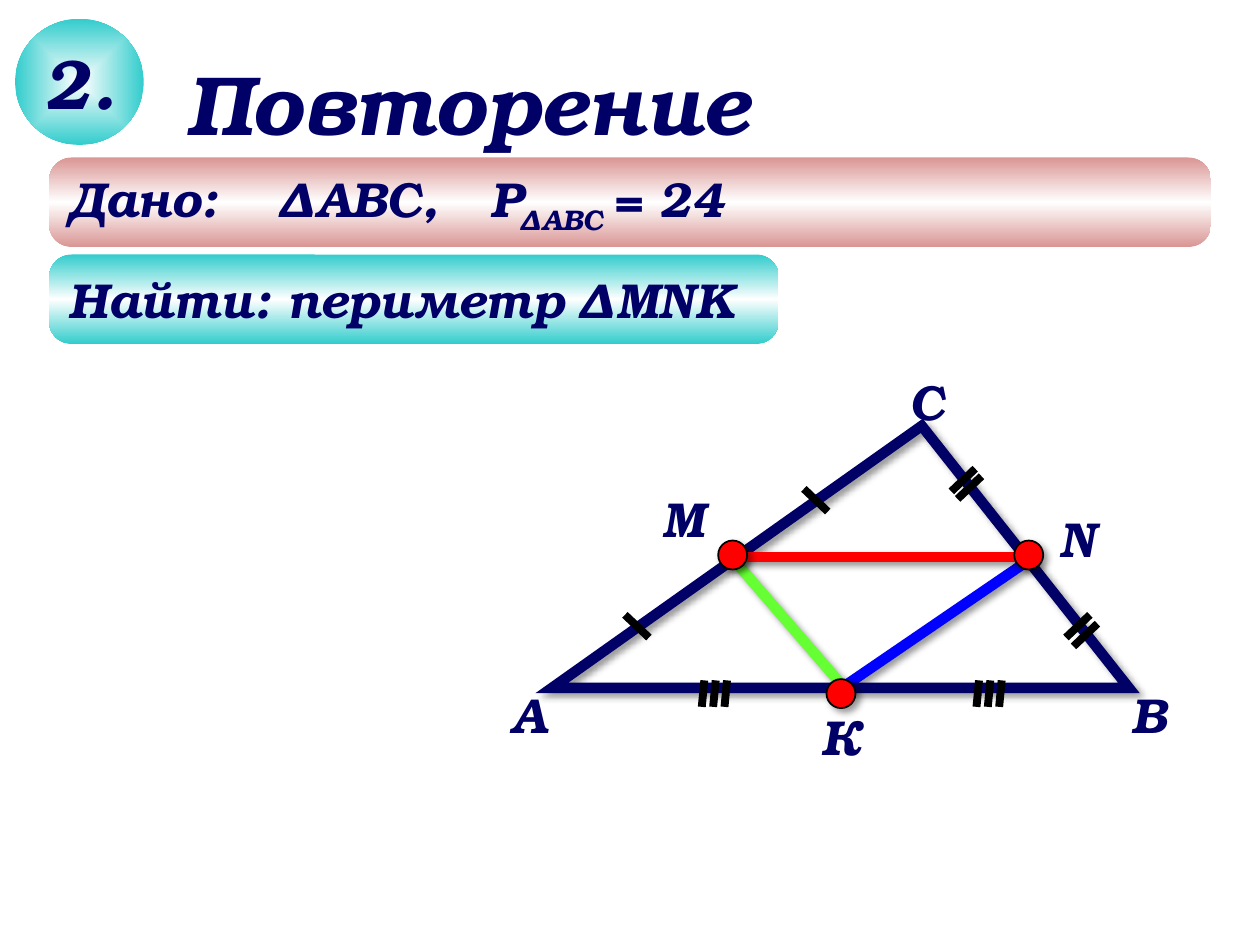
"""Build a geometry revision slide about a triangle and its midlines."""
from dataclasses import dataclass

from lxml.etree import SubElement
from pptx import Presentation
from pptx.dml.color import RGBColor
from pptx.enum.shapes import MSO_CONNECTOR, MSO_SHAPE
from pptx.enum.text import MSO_ANCHOR, MSO_AUTO_SIZE, PP_ALIGN
from pptx.oxml.ns import qn
from pptx.util import Inches, Pt

FONT = "TeX Gyre Bonum"
COLORS = {
    "navy": "000066", "rose": "D99694", "teal": "33CCCC", "white": "FFFFFF",
    "green": "66FF33", "blue": "0000FF", "red": "FF0000", "black": "000000",
    "outline": "5E457C",
}


@dataclass(frozen=True)
class Segment:
    start: tuple[float, float]
    end: tuple[float, float]
    color: str


@dataclass(frozen=True)
class Label:
    text: str
    left: float
    top: float
    width: float = 0.5


@dataclass(frozen=True)
class TickGroup:
    starts: tuple[tuple[float, float], ...]
    run: float
    rise: float


@dataclass(frozen=True)
class Bar:
    top: float
    width: float
    color: str


GIVEN_BAR = Bar(1.25, 9.22, "rose")
FIND_BAR = Bar(2.02, 5.79, "teal")
INNER_SIDES = [
    Segment((6.71, 5.47), (5.82, 4.44), "green"),
    Segment((8.13, 4.47), (6.71, 5.44), "blue"),
]
MIDLINE = Segment((5.85, 4.42), (8.18, 4.42), "red")
MIDPOINTS = [(5.7, 4.29), (8.05, 4.29), (6.56, 5.39)]
TICKS = [
    TickGroup(((6.38, 3.88), (4.96, 4.88)), 0.19, 0.18),
    TickGroup(((7.74, 3.72), (7.79, 3.78), (8.65, 4.88), (8.71, 4.95)), -0.19, 0.18),
    TickGroup(tuple((left + offset, 5.4) for left in (5.59, 7.77)
                    for offset in (0, 0.09, 0.18)), -0.02, 0.21),
]
LABELS = [
    Label("А", 3.96, 5.38), Label("С", 7.12, 2.9), Label("В", 8.88, 5.38),
    Label("М", 5.16, 3.83, 0.54), Label("N", 8.31, 3.99), Label("К", 6.42, 5.56),
]


def rgb(name: str) -> RGBColor:
    return RGBColor.from_string(COLORS[name])


def add_color(parent, name: str):
    return SubElement(parent, qn("a:srgbClr"), val=COLORS[name])


def format_runs(paragraph, size: float) -> None:
    for run in paragraph.runs:
        font = run.font
        font.name, font.size = FONT, Pt(size)
        font.bold = font.italic = True
        font.color.rgb = rgb("navy")


def set_gradient(shape, stops: list[tuple[int, str]], radial: bool = False) -> None:
    shape.fill.gradient()
    gradient = shape.element.spPr.find(qn("a:gradFill"))
    for child in list(gradient):
        gradient.remove(child)
    stop_list = SubElement(gradient, qn("a:gsLst"))
    for position, color in stops:
        add_color(SubElement(stop_list, qn("a:gs"), pos=str(position * 1000)), color)
    if radial:
        shade = SubElement(gradient, qn("a:path"), path="shape")
        SubElement(shade, qn("a:fillToRect"), l="50000", t="50000", r="50000", b="50000")
    else:
        SubElement(gradient, qn("a:lin"), ang="5400000", scaled="0")


def set_shadow(shape, visible: bool = True) -> None:
    properties = shape.element.spPr
    effects = properties.find(qn("a:effectLst"))
    if effects is None:
        effects = SubElement(properties, qn("a:effectLst"))
    if visible:
        shadow = SubElement(effects, qn("a:outerShdw"), blurRad=str(Pt(4)),
                            dist=str(Pt(3)), dir="2700000", algn="tl", rotWithShape="0")
        SubElement(add_color(shadow, "black"), qn("a:alpha"), val="40000")


def add_shape(slide, kind, left: float, top: float, width: float, height: float):
    shape = slide.shapes.add_shape(kind, Inches(left), Inches(top), Inches(width), Inches(height))
    shape.shadow.inherit = False
    return shape


def add_bar(slide, bar: Bar):
    shape = add_shape(slide, MSO_SHAPE.ROUNDED_RECTANGLE, 0.39, bar.top, bar.width, 0.71)
    shape.adjustments[0] = 0.254
    set_gradient(shape, [(0, bar.color), (50, "white"), (100, bar.color)])
    shape.line.fill.background()
    shape.text_frame.vertical_anchor = MSO_ANCHOR.MIDDLE
    paragraph = shape.text_frame.paragraphs[0]
    paragraph.alignment = PP_ALIGN.LEFT
    return paragraph


def add_given(slide) -> None:
    paragraph = add_bar(slide, GIVEN_BAR)
    tabs = SubElement(paragraph._p.get_or_add_pPr(), qn("a:tabLst"))
    for position in (1.69, 3.35):
        SubElement(tabs, qn("a:tab"), pos=str(Inches(position)), algn="l")
    for text in ("Дано:\tΔАВС,\tР", "ΔАВС ", "= 24"):
        paragraph.add_run().text = text
    format_runs(paragraph, 28)
    paragraph.runs[1].font._element.set("baseline", "-25000")


def add_find(slide) -> None:
    paragraph = add_bar(slide, FIND_BAR)
    paragraph.text = "Найти: периметр ΔΜNΚ"
    format_runs(paragraph, 28)


def add_number(slide) -> None:
    badge = add_shape(slide, MSO_SHAPE.OVAL, 0.12, 0.15, 1.02, 1)
    set_gradient(badge, [(0, "white"), (100, "teal")], radial=True)
    badge.line.fill.background()
    frame = badge.text_frame
    frame.text = "2."
    frame.word_wrap = False
    frame.vertical_anchor = MSO_ANCHOR.MIDDLE
    frame.paragraphs[0].alignment = PP_ALIGN.CENTER
    format_runs(frame.paragraphs[0], 40)


def add_title(slide) -> None:
    title = slide.shapes.title
    title.left, title.top = Inches(1.38), Inches(0.36)
    title.width, title.height = Inches(4.72), Inches(0.91)
    frame = title.text_frame
    frame.text = "Повторение"
    frame.vertical_anchor = MSO_ANCHOR.TOP
    frame.auto_size = MSO_AUTO_SIZE.NONE
    paragraph = frame.paragraphs[0]
    paragraph.alignment = PP_ALIGN.LEFT
    format_runs(paragraph, 48)
    properties = paragraph.runs[0].font._element
    outline = SubElement(properties, qn("a:ln"), w=str(Pt(0.71)))
    add_color(SubElement(outline, qn("a:solidFill")), "outline")
    properties.insert(0, outline)


def add_segment(slide, segment: Segment, width: float = 6, shadow: bool = True) -> None:
    points = [Inches(value) for value in segment.start + segment.end]
    connector = slide.shapes.add_connector(MSO_CONNECTOR.STRAIGHT, *points)
    connector.line.color.rgb = rgb(segment.color)
    connector.line.width = Pt(width)
    set_shadow(connector, shadow)


def add_triangle(slide) -> None:
    triangle = add_shape(slide, MSO_SHAPE.ISOSCELES_TRIANGLE, 4.38, 3.38, 4.58, 2.08)
    triangle.adjustments[0] = 0.641
    triangle.fill.background()
    triangle.line.color.rgb = rgb("navy")
    triangle.line.width = Pt(6)
    SubElement(triangle.element.spPr.find(qn("a:ln")), qn("a:miter"), lim="800000")
    set_shadow(triangle)


def add_midpoint(slide, left: float, top: float) -> None:
    point = add_shape(slide, MSO_SHAPE.OVAL, left, top, 0.23, 0.23)
    point.fill.solid()
    point.fill.fore_color.rgb = rgb("red")
    point.line.color.rgb = rgb("black")
    point.line.width = Pt(1)
    set_shadow(point)


def add_label(slide, label: Label) -> None:
    box = slide.shapes.add_textbox(Inches(label.left), Inches(label.top),
                                   Inches(label.width), Inches(0.57))
    frame = box.text_frame
    frame.text = label.text
    frame.word_wrap = False
    frame.auto_size = MSO_AUTO_SIZE.SHAPE_TO_FIT_TEXT
    format_runs(frame.paragraphs[0], 28)


def main() -> None:
    presentation = Presentation()
    presentation.slide_width, presentation.slide_height = Inches(10), Inches(7.5)
    slide = presentation.slides.add_slide(presentation.slide_layouts[5])
    add_given(slide)
    add_find(slide)
    add_number(slide)
    add_title(slide)
    for side in INNER_SIDES:
        add_segment(slide, side)
    add_triangle(slide)
    add_segment(slide, MIDLINE)
    for left, top in MIDPOINTS:
        add_midpoint(slide, left, top)
    for group in TICKS:
        for x, y in group.starts:
            tick = Segment((x, y), (x + group.run, y + group.rise), "black")
            add_segment(slide, tick, 4.5, shadow=False)
    for label in LABELS:
        add_label(slide, label)
    presentation.save("out.pptx")


if __name__ == "__main__":
    main()
